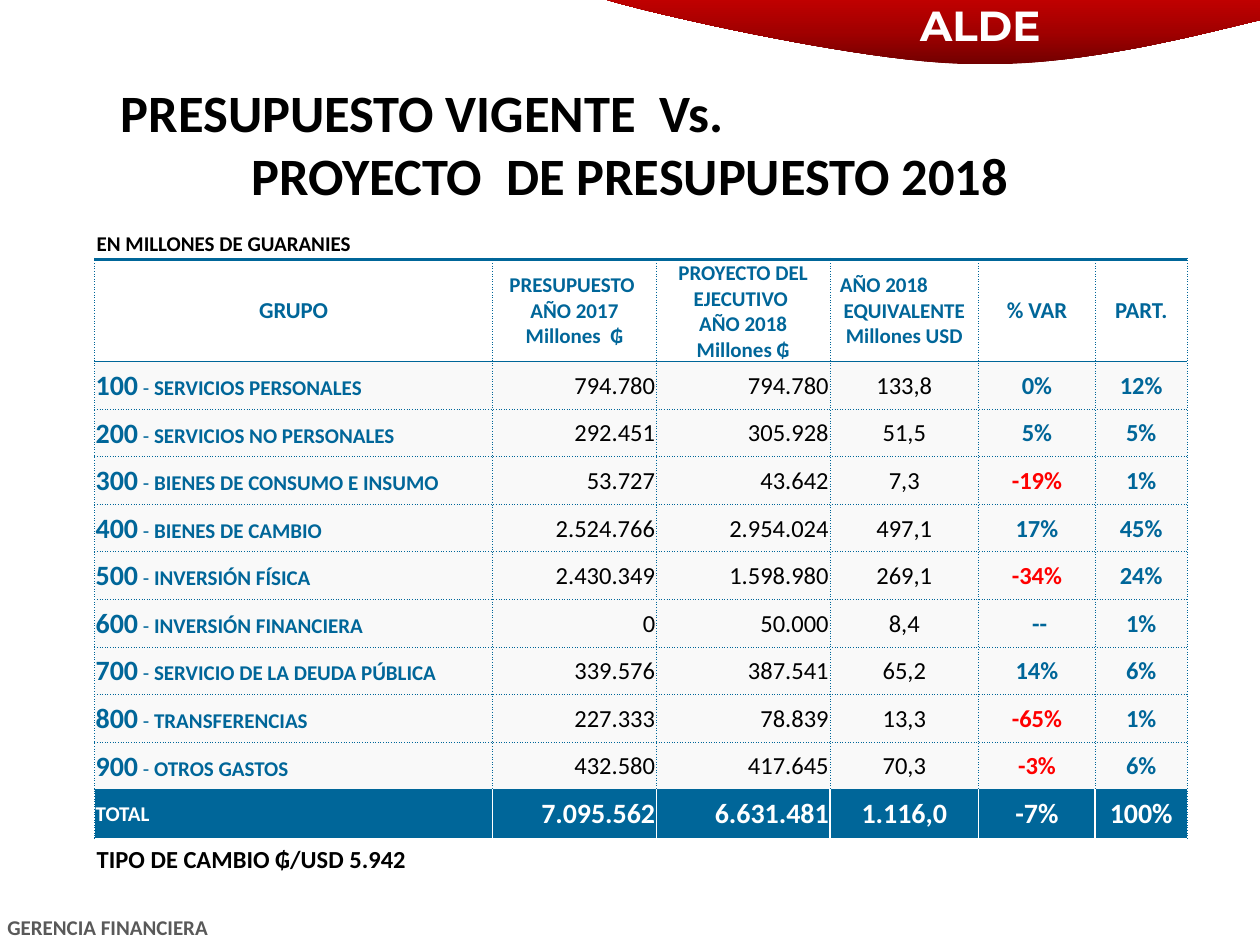
from copy import deepcopy
from dataclasses import dataclass

from lxml import etree
from pptx import Presentation
from pptx.dml.color import RGBColor
from pptx.enum.text import MSO_ANCHOR, PP_ALIGN
from pptx.oxml.ns import qn
from pptx.util import Pt

LEFT, CENTER, RIGHT = PP_ALIGN.LEFT, PP_ALIGN.CENTER, PP_ALIGN.RIGHT
MIDDLE, BOTTOM = MSO_ANCHOR.MIDDLE, MSO_ANCHOR.BOTTOM
COLORS = {
    "blue": "006699", "red": "FF0000", "black": "000000", "white": "FFFFFF",
    "gray": "595959", "row": "F9F9F9",
}
BANNER_STOPS = [(0, "720000"), (0.5, "A20000"), (1, "C00000")]
BANNER_CURVES = [
    ((344.9, -0.7), (366.5, 6.5), (491, 35.3), (553.7, 36.7)),
    ((553.7, 36.7), (616.3, 38.9), (691.9, 18), (720, 11.5)),
]
CURVE_STEPS = 24
COLUMN_WIDTHS = [227.5, 93.6, 99.2, 85, 66.6, 52.6]
HEADER_HEIGHT, ROW_HEIGHT = 48, 27.2
ALIGNMENTS = [LEFT, RIGHT, RIGHT, CENTER, CENTER, CENTER]


@dataclass
class Span:
    text: str
    size: float
    color: str = "blue"
    bold: bool = True
    font: str = "Calibri"


@dataclass
class Line:
    spans: list[Span]
    align: PP_ALIGN = LEFT
    indent: float = 0


@dataclass
class Label:
    left: float
    top: float
    width: float
    height: float
    lines: list[Line]


@dataclass
class Border:
    width: float
    color: str = "blue"
    dash: str = "solid"


DOTTED, EDGE = Border(0.5, dash="sysDot"), Border(0.25, dash="sysDot")
RULE, TOP_RULE, DIVIDER = Border(1), Border(2.25), Border(1, "white")

LABELS = [
    Label(513.4, -3.6, 93.6, 36, [Line([Span("ALDE", 24, "white", font="Montserrat")], CENTER)]),
    Label(-2.9, 519, 249, 21.8, [Line([Span("GERENCIA FINANCIERA", 12, "gray")])]),
    Label(48.2, 128.2, 189.4, 21.8, [Line([Span("EN MILLONES DE GUARANIES", 12, "black")])]),
    Label(48.2, 478.8, 209.5, 24.2, [Line([Span("TIPO DE CAMBIO ₲/USD 5.942", 14, "black")])]),
]
TITLE = Label(0, 71.3, 720, 49.7, [
    Line([Span("PRESUPUESTO VIGENTE  Vs.", 30, "black")], LEFT, 65.5),
    Line([Span("PROYECTO  DE PRESUPUESTO 2018", 30, "black")], CENTER),
])
HEADERS = [
    (13, ["GRUPO"]),
    (12, ["PRESUPUESTO ", "AÑO 2017", "Millones  ₲"]),
    (12, ["PROYECTO DEL EJECUTIVO ", "AÑO 2018", "Millones ₲"]),
    (12, ["AÑO 2018", "EQUIVALENTE", "Millones USD"]),
    (13, ["% VAR"]),
    (13, ["PART."]),
]
GROUPS = [
    ("100", "SERVICIOS PERSONALES", "794.780", "794.780", "133,8", "0%", "12%"),
    ("200", "SERVICIOS NO PERSONALES", "292.451", "305.928", "51,5", "5%", "5%"),
    ("300", "BIENES DE CONSUMO E INSUMO", "53.727", "43.642", "7,3", "-19%", "1%"),
    ("400", "BIENES DE CAMBIO", "2.524.766", "2.954.024", "497,1", "17%", "45%"),
    ("500", "INVERSIÓN FÍSICA", "2.430.349", "1.598.980", "269,1", "-34%", "24%"),
    ("600", "INVERSIÓN FINANCIERA", "0", "50.000", "8,4", " --", "1%"),
    ("700", "SERVICIO DE LA DEUDA PÚBLICA", "339.576", "387.541", "65,2", "14%", "6%"),
    ("800", "TRANSFERENCIAS", "227.333", "78.839", "13,3", "-65%", "1%"),
    ("900", "OTROS GASTOS", "432.580", "417.645", "70,3", "-3%", "6%"),
]
TOTALS = ["TOTAL", "7.095.562", "6.631.481", "1.116,0", "-7%", "100%"]


def write_lines(text_frame, lines: list[Line]) -> None:
    """Fill a text frame with formatted paragraphs."""
    for index, line in enumerate(lines):
        para = text_frame.add_paragraph() if index else text_frame.paragraphs[0]
        para.alignment = line.align
        if line.indent:
            para._p.get_or_add_pPr().set("marL", str(Pt(line.indent)))
        for span in line.spans:
            run = para.add_run()
            run.text = span.text
            run.font.name, run.font.size, run.font.bold = span.font, Pt(span.size), span.bold
            run.font.color.rgb = RGBColor.from_string(COLORS[span.color])


def add_label(page, label: Label):
    """Add a text box and return it."""
    box = page.shapes.add_textbox(Pt(label.left), Pt(label.top), Pt(label.width), Pt(label.height))
    box.text_frame.word_wrap = True
    write_lines(box.text_frame, label.lines)
    return box


def add_banner(page) -> None:
    """Draw the curved red band at the top edge."""
    points = []
    for a, b, c, d in BANNER_CURVES:
        for step in range(1, CURVE_STEPS + 1):
            t = step / CURVE_STEPS
            weights = ((1 - t) ** 3, 3 * t * (1 - t) ** 2, 3 * t * t * (1 - t), t ** 3)
            points.append(tuple(
                Pt(sum(w * p[axis] for w, p in zip(weights, (a, b, c, d)))) for axis in (0, 1)))
    points.append((Pt(720), Pt(0)))
    start_x, start_y = BANNER_CURVES[0][0]
    builder = page.shapes.build_freeform(Pt(start_x), Pt(start_y))
    builder.add_line_segments(points, close=True)
    banner = builder.convert_to_shape()
    banner.shadow.inherit = False
    banner.line.fill.background()
    banner.fill.gradient()
    banner.fill.gradient_angle = 90
    stop_list = banner._element.spPr.find(qn("a:gradFill")).find(qn("a:gsLst"))
    stop_list.append(deepcopy(stop_list[0]))
    for stop, (position, color) in zip(banner.fill.gradient_stops, BANNER_STOPS):
        stop.position = position
        stop.color.rgb = RGBColor.from_string(color)


def set_borders(cell, borders: dict[str, Border]) -> None:
    """Set the cell's side lines."""
    properties = cell._tc.get_or_add_tcPr()
    for side, border in borders.items():
        line = etree.SubElement(properties, qn(f"a:ln{side}"), w=str(Pt(border.width)))
        fill = etree.SubElement(line, qn("a:solidFill"))
        etree.SubElement(fill, qn("a:srgbClr"), val=COLORS[border.color])
        etree.SubElement(line, qn("a:prstDash"), val=border.dash)


def header_lines(column: int) -> list[Line]:
    """Return the heading paragraphs of a column."""
    size, texts = HEADERS[column]
    lines = [Line([Span(text, size)], CENTER) for text in texts]
    if column == 3:
        lines[0].align, lines[0].indent = LEFT, 5
    return lines


def group_lines(row: int, column: int) -> list[Line]:
    """Return the paragraph of a budget group cell."""
    code, name, *values = GROUPS[row]
    if column == 0:
        return [Line([Span(code, 16), Span(" - ", 12, bold=False), Span(name, 12)])]
    text, percent = values[column - 1], column > 3
    color = "red" if text.startswith("-") else "blue" if percent else "black"
    return [Line([Span(text, 14, color, percent)], ALIGNMENTS[column])]


def add_budget_table(page) -> None:
    """Add the budget comparison table."""
    total_row, last_column = len(GROUPS) + 1, len(COLUMN_WIDTHS) - 1
    height = HEADER_HEIGHT + total_row * ROW_HEIGHT
    table = page.shapes.add_table(total_row + 1, last_column + 1, Pt(54), Pt(148.3),
                                  Pt(sum(COLUMN_WIDTHS)), Pt(height)).table
    table.first_row = table.horz_banding = False
    for column, width in zip(table.columns, COLUMN_WIDTHS):
        column.width = Pt(width)
    for r, row in enumerate(table.rows):
        row.height = Pt(ROW_HEIGHT if r else HEADER_HEIGHT)
        inner = DIVIDER if r == total_row else DOTTED
        for c, cell in enumerate(row.cells):
            cell.margin_left = cell.margin_right = cell.margin_top = Pt(0.7)
            cell.margin_bottom = Pt(0)
            cell.vertical_anchor = MIDDLE
            set_borders(cell, {
                "L": inner if c else EDGE,
                "R": inner if c < last_column else EDGE,
                "T": TOP_RULE if r == 0 else RULE if r in (1, total_row) else DOTTED,
                "B": RULE if r in (0, total_row - 1, total_row) else DOTTED,
            })
            if r == 0:
                cell.fill.background()
                lines = header_lines(c)
            else:
                cell.fill.solid()
                fill = "blue" if r == total_row else "row"
                cell.fill.fore_color.rgb = RGBColor.from_string(COLORS[fill])
                total = Line([Span(TOTALS[c], 16 if c else 12, "white")], ALIGNMENTS[c])
                lines = [total] if r == total_row else group_lines(r - 1, c)
            write_lines(cell.text_frame, lines)


def main() -> None:
    """Build and save the budget slide."""
    deck = Presentation()
    deck.slide_width, deck.slide_height = Pt(720), Pt(540)
    page = deck.slides.add_slide(deck.slide_layouts[6])
    add_banner(page)
    title = add_label(page, TITLE).text_frame
    title.vertical_anchor = BOTTOM
    title.margin_left = title.margin_right = title.margin_top = title.margin_bottom = Pt(3.6)
    add_budget_table(page)
    for label in LABELS:
        add_label(page, label)
    deck.save("out.pptx")


if __name__ == "__main__":
    main()
